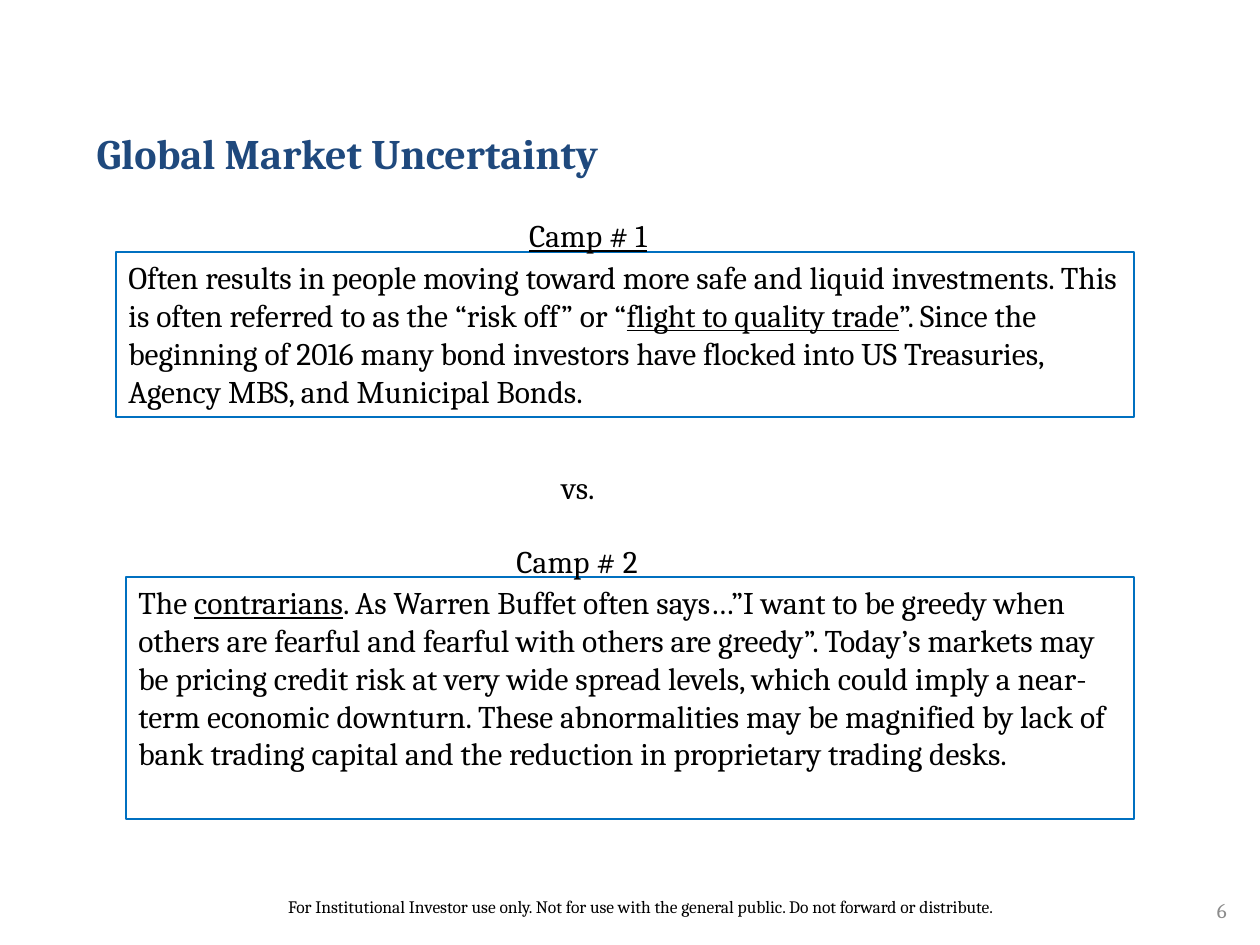
from pptx import Presentation
from pptx.dml.color import RGBColor
from pptx.enum.shapes import MSO_SHAPE
from pptx.enum.text import MSO_ANCHOR, PP_ALIGN
from pptx.util import Pt

RECTANGLE = MSO_SHAPE.RECTANGLE
TOP, MIDDLE = MSO_ANCHOR.TOP, MSO_ANCHOR.MIDDLE
LEFT, CENTER, RIGHT = PP_ALIGN.LEFT, PP_ALIGN.CENTER, PP_ALIGN.RIGHT
EMU_PER_PX = 914400 / 126
COLORS = {"title": "1F497D", "text": "000000", "number": "8C8C8C", "border": "0070C0"}

CAMP_ONE = [
    ("Often results in people moving toward more safe and liquid investments. "
     "This is often referred to as the “risk off” or “", False),
    ("flight to quality trade", True),
    ("”. Since the beginning of 2016 many bond investors have flocked into "
     "US Treasuries, Agency MBS, and Municipal Bonds.", False),
]
CAMP_TWO = [
    ("The ", False),
    ("contrarians", True),
    (". As Warren Buffet often says…”I want to be greedy when others are fearful "
     "and fearful with others are greedy”. Today’s markets may be pricing credit "
     "risk at very wide spread levels, which could imply a near-term economic "
     "downturn. These abnormalities may be magnified by lack of bank trading "
     "capital and the reduction in proprietary trading desks.", False),
]
FOOTER = ("For Institutional Investor use only. Not for use with the general public. "
          "Do not forward or distribute.")


def px(value):
    """Convert pixels to EMU."""
    return round(value * EMU_PER_PX)


def write_text(shape, runs, size=18, color="text", bold=False, align=LEFT, anchor=TOP):
    """Write (text, underlined) runs into one formatted paragraph."""
    frame = shape.text_frame
    frame.word_wrap = True
    frame.vertical_anchor = anchor
    paragraph = frame.paragraphs[0]
    paragraph.alignment = align
    for text, underline in runs:
        run = paragraph.add_run()
        run.text = text
        formats = {"name": "Cambria", "size": Pt(size), "bold": bold, "underline": underline}
        for name, value in formats.items():
            setattr(run.font, name, value)
        run.font.color.rgb = RGBColor.from_string(COLORS[color])


def add_title(slide, box, text):
    """Place and format the title placeholder."""
    title = slide.shapes.title
    for name, value in zip(("left", "top", "width", "height"), box):
        setattr(title, name, px(value))
    write_text(title, [(text, False)], size=24, color="title", bold=True, anchor=MIDDLE)


def add_label(slide, box, text, underline=False, **formats):
    """Add a single-line text box."""
    label = slide.shapes.add_textbox(*map(px, box))
    write_text(label, [(text, underline)], **formats)


def add_panel(slide, box, runs):
    """Add an unfilled, outlined rectangle with text."""
    panel = slide.shapes.add_shape(RECTANGLE, *map(px, box))
    panel.shadow.inherit = False
    panel.fill.background()
    panel.line.color.rgb = RGBColor.from_string(COLORS["border"])
    panel.line.width = Pt(0.75)
    write_text(panel, runs)


def main():
    """Build and save the slide."""
    presentation = Presentation()
    presentation.slide_width, presentation.slide_height = px(1260), px(945)
    slide = presentation.slides.add_slide(presentation.slide_layouts[5])
    add_label(slide, (231, 890, 819, 34), FOOTER, size=10, align=CENTER)
    add_title(slide, (84, 95, 987, 116), "Global Market Uncertainty")
    add_label(slide, (945, 885, 294, 50), "6", size=12, color="number",
              align=RIGHT, anchor=MIDDLE)
    add_panel(slide, (116, 252, 1018, 165), CAMP_ONE)
    add_label(slide, (357, 210, 462, 50), "Camp # 1", underline=True, align=CENTER)
    add_panel(slide, (126, 577, 1008, 242), CAMP_TWO)
    add_label(slide, (504, 536, 273, 50), "Camp # 2")
    add_label(slide, (494, 462, 168, 50), "vs.", align=CENTER)
    presentation.save("out.pptx")


if __name__ == "__main__":
    main()
